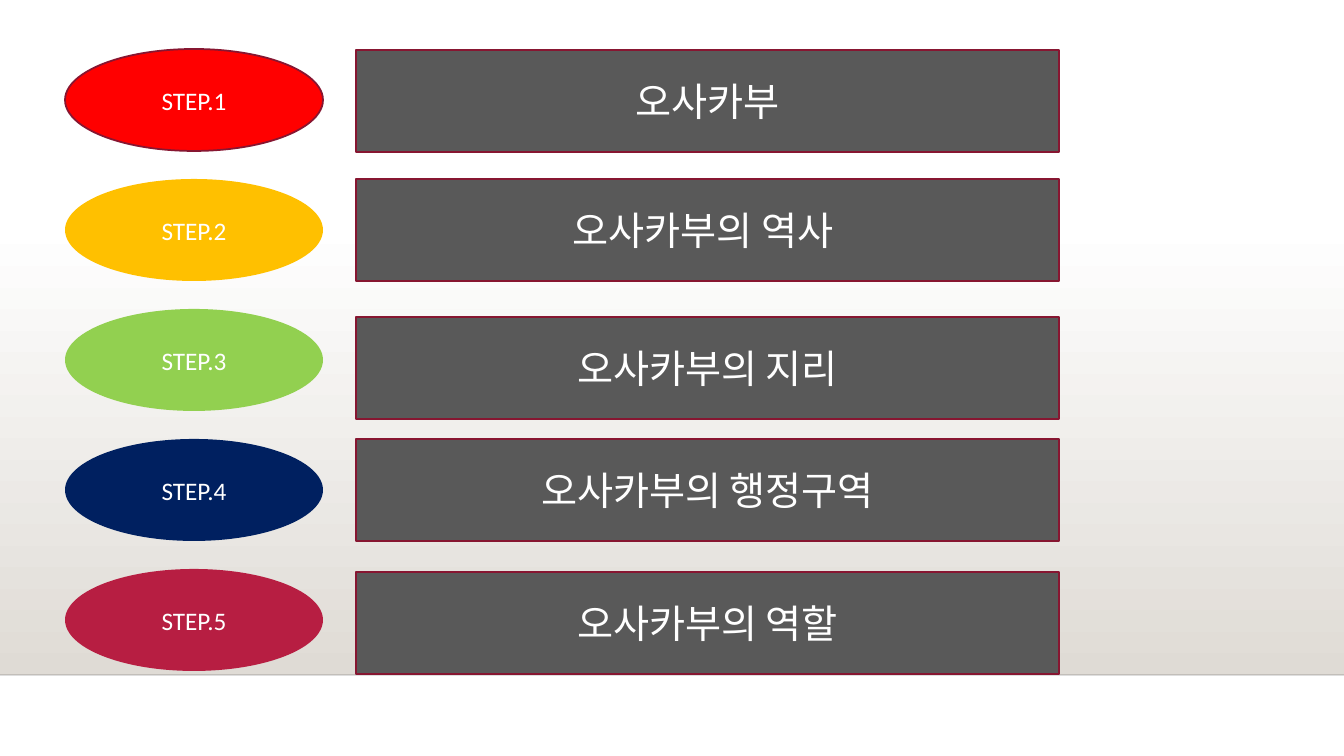
"""Build a slide with five coloured steps beside their topics."""
from lxml import etree
from pptx import Presentation
from pptx import util as u
from pptx.dml.color import RGBColor
from pptx.enum import shapes, text
from pptx.oxml.ns import qn

SCALE = 12192000 / 1344
WIDE, HIGH = 1344, 756
WHITE = RGBColor(0xFF, 0xFF, 0xFF)
SAND = RGBColor(0xDF, 0xDB, 0xD5)
BLACK = RGBColor(0x00, 0x00, 0x01)
WINE = RGBColor(0x87, 0x16, 0x31)
GREY = RGBColor(0x59, 0x59, 0x59)
RED = RGBColor(0xFF, 0x00, 0x00)
GOLD = RGBColor(0xFF, 0xC0, 0x00)
GREEN = RGBColor(0x92, 0xD0, 0x50)
NAVY = RGBColor(0x00, 0x20, 0x60)
ROSE = RGBColor(0xB7, 0x1E, 0x42)

FLOOR = 675
OVAL_TOP, PITCH = 49, 130
STEPS = [
    (RED, WINE, 50, "오사카부"),
    (GOLD, None, 179, "오사카부의 역사 "),
    (GREEN, None, 317, "오사카부의 지리"),
    (NAVY, None, 439, "오사카부의 행정구역"),
    (ROSE, None, 572, "오사카부의 역할"),
]


def px(num):
    """Turn pixels into EMU."""
    return u.Emu(round(num * SCALE))


def style(item, form):
    """Set each format value on the item."""
    for name, value in form.items():
        setattr(item, name, value)


def add_shape(slide, kind, box, edge=None):
    """Add a shape without shadow, with an edge if a colour is given."""
    shape = slide.shapes.add_shape(kind, *map(px, box))
    shape.shadow.inherit = False
    if edge is None:
        shape.line.fill.background()
    else:
        shape.line.color.rgb = edge
        shape.line.width = u.Pt(1.25)
    return shape


def add_label(slide, kind, box, fill, edge, words, size):
    """Add a filled shape with centred white text."""
    shape = add_shape(slide, kind, box, edge)
    shape.fill.solid()
    shape.fill.fore_color.rgb = fill
    frame = shape.text_frame
    style(frame, {"word_wrap": True, "vertical_anchor": text.MSO_ANCHOR.MIDDLE})
    para = frame.paragraphs[0]
    para.alignment = text.PP_ALIGN.CENTER
    run = para.add_run()
    run.text = words
    style(run.font, {"name": "Calibri", "size": u.Pt(size)})
    run.font.color.rgb = WHITE


def add_wash(slide, top):
    """Add the band that fades from white down to sand."""
    band = add_shape(slide, shapes.MSO_SHAPE.RECTANGLE, (0, top, WIDE, FLOOR - top))
    band.fill.gradient()
    band.fill.gradient_angle = 270
    for stop, tint, place in zip(band.fill.gradient_stops, (WHITE, SAND), (0, 1)):
        stop.color.rgb = tint
        stop.position = place


def add_rule(slide, top):
    """Add a faint line across the slide."""
    rule = slide.shapes.add_connector(
        shapes.MSO_CONNECTOR.STRAIGHT, px(0), px(top), px(WIDE), px(top))
    rule.line.color.rgb = BLACK
    rule.line.width = u.Pt(1)
    props = rule._element.spPr
    tint = next(props.iter(qn("a:srgbClr")))
    etree.SubElement(tint, qn("a:alpha"), val="20000")
    etree.SubElement(props, qn("a:effectLst"))


def main():
    """Build and save the slide."""
    deck = Presentation()
    style(deck, {"slide_width": px(WIDE), "slide_height": px(HIGH)})
    slide = deck.slides.add_slide(deck.slide_layouts[6])
    add_wash(slide, 223)
    add_rule(slide, FLOOR)
    for num, (fill, edge, top, topic) in enumerate(STEPS):
        oval = (65, OVAL_TOP + num * PITCH, 258, 102)
        add_label(slide, shapes.MSO_SHAPE.OVAL, oval, fill, edge, f"STEP.{num + 1}", 18)
        bar = (356, top, 703, 102)
        add_label(slide, shapes.MSO_SHAPE.RECTANGLE, bar, GREY, WINE, topic, 28)
    deck.save("out.pptx")


if __name__ == "__main__":
    main()
